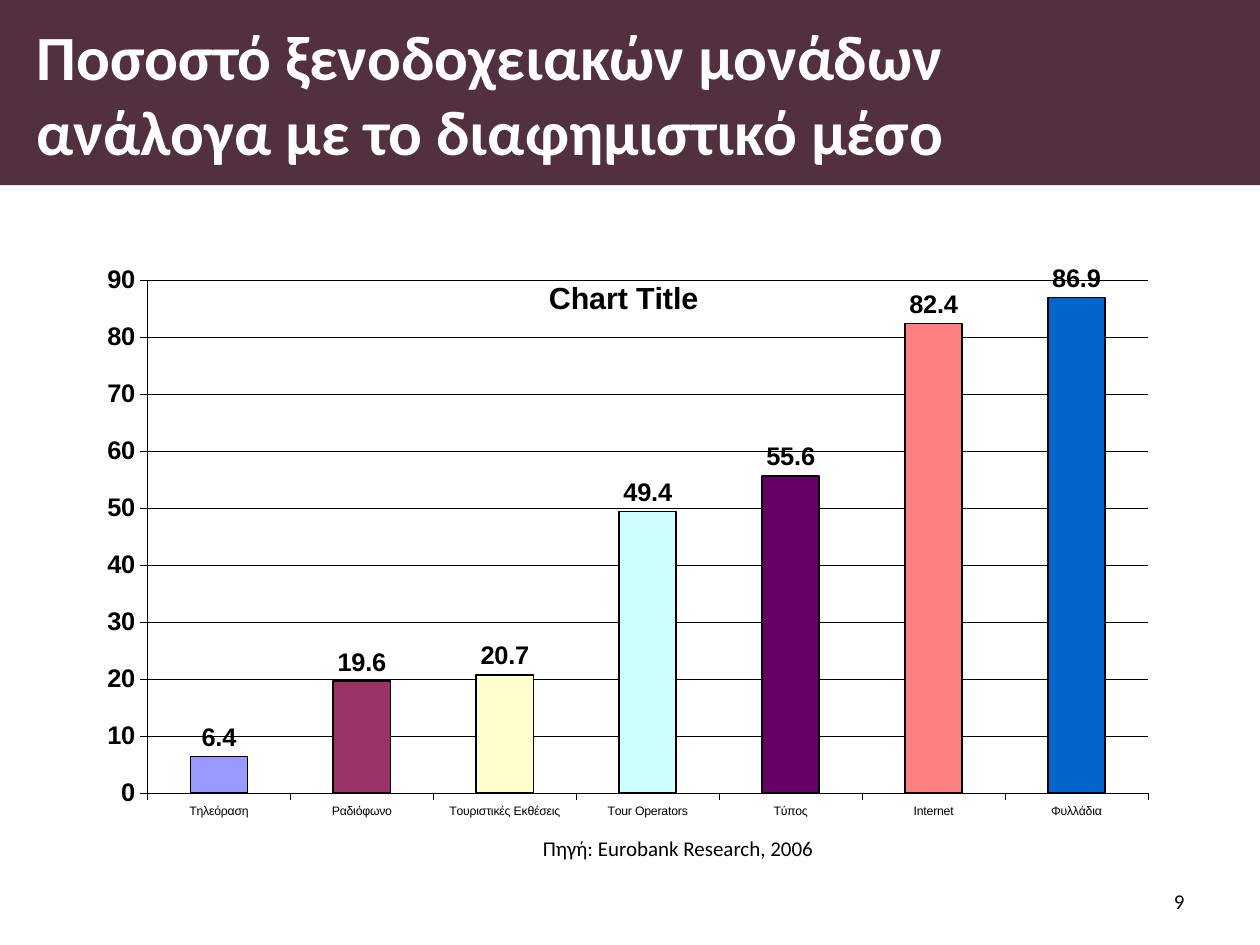
from lxml import etree
from pptx import Presentation
from pptx.chart.data import CategoryChartData
from pptx.dml.color import RGBColor
from pptx.enum.chart import XL_CHART_TYPE as ChartType
from pptx.enum.chart import XL_LABEL_POSITION as LabelPos
from pptx.enum.chart import XL_TICK_LABEL_POSITION as TickLabelPos
from pptx.enum.chart import XL_TICK_MARK as TickMark
from pptx.enum.text import MSO_ANCHOR as Anchor
from pptx.enum.text import MSO_AUTO_SIZE as AutoSize
from pptx.enum.text import PP_ALIGN as Align
from pptx.oxml import parse_xml
from pptx.oxml.ns import nsdecls, qn
from pptx.util import Inches, Pt

COLORS = {"band": "52303F", "white": "FFFFFF", "black": "000000"}

# category, percentage, column colour
MEDIA = [
    ("Τηλεόραση", 6.4, "9999FF"),
    ("Ραδιόφωνο", 19.6, "993366"),
    ("Τουριστικές Εκθέσεις", 20.7, "FFFFCC"),
    ("Tour Operators", 49.4, "CCFFFF"),
    ("Τύπος", 55.6, "660066"),
    ("Internet", 82.4, "FF8080"),
    ("Φυλλάδια", 86.9, "0066CC"),
]


def rgb(name):
    return RGBColor.from_string(COLORS.get(name, name))


def style_font(font, size, color="black", name="Calibri", bold=False):
    font.size, font.name, font.bold = Pt(size), name, bold
    font.color.rgb = rgb(color)


def style_line(line, width):
    line.color.rgb = rgb("black")
    line.width = Pt(width)


def place(sp, x, y, w, h):
    sp.left, sp.top, sp.width, sp.height = (Inches(v) for v in (x, y, w, h))


def add_title(s, x, y, w, h):
    sp = s.shapes.title
    place(sp, x, y, w, h)
    sp.fill.solid()
    sp.fill.fore_color.rgb = rgb("band")
    tf = sp.text_frame
    tf.text = "Ποσοστό ξενοδοχειακών μονάδων \vανάλογα με το διαφημιστικό μέσο"
    tf.auto_size = AutoSize.NONE
    tf.vertical_anchor = Anchor.MIDDLE
    tf.margin_left = Inches(0.29)
    p = tf.paragraphs[0]
    p.alignment = Align.LEFT
    style_font(p.font, 36, "white", bold=True)


def add_text(s, text, x, y, w, h, align=Align.LEFT, anchor=Anchor.TOP, wrap=True):
    tf = s.shapes.add_textbox(*(Inches(v) for v in (x, y, w, h))).text_frame
    tf.text = text
    tf.word_wrap = wrap
    tf.vertical_anchor = anchor
    p = tf.paragraphs[0]
    p.alignment = align
    style_font(p.font, 12)


def set_layout(parent, index, **values):
    """Give a chart title or plot area a manual layout, in fractions of the chart."""
    for old in parent.findall(qn("c:layout")):
        parent.remove(old)
    layout = parse_xml(f"<c:layout {nsdecls('c')}><c:manualLayout/></c:layout>")
    for tag, value in values.items():
        etree.SubElement(layout[0], qn(f"c:{tag}")).set("val", str(value))
    parent.insert(index, layout)


def add_chart_title(chart):
    title = chart.chart_title
    title.text_frame.text = "Chart Title"
    style_font(title.text_frame.paragraphs[0].font, 17.4, name="Arial", bold=True)
    title_xml = chart.element.chart.find(qn("c:title"))
    set_layout(title_xml, 1, xMode="edge", yMode="edge", x=0.43, y=0.045)
    overlay = title_xml.find(qn("c:overlay"))
    if overlay is None:
        overlay = etree.Element(qn("c:overlay"))
        title_xml.find(qn("c:layout")).addnext(overlay)
    overlay.set("val", "1")


def style_axis(axis, size, bold):
    axis.major_tick_mark = TickMark.OUTSIDE
    axis.minor_tick_mark = TickMark.NONE
    style_font(axis.tick_labels.font, size, name="Arial", bold=bold)
    style_line(axis.format.line, 0.22)


def add_media_chart(s, x, y, w, h):
    data = CategoryChartData()
    data.categories = [name for name, _, _ in MEDIA]
    data.add_series("Series 1", [value for _, value, _ in MEDIA])
    box = [Inches(v) for v in (x, y, w, h)]
    chart = s.shapes.add_chart(ChartType.COLUMN_CLUSTERED, *box, data).chart
    chart.has_legend = False
    style_font(chart.font, 14.5, name="Arial", bold=True)
    add_chart_title(chart)
    set_layout(chart.element.chart.plotArea, 0, layoutTarget="inner", xMode="edge",
               yMode="edge", x=0.067, y=0.056, w=0.917, h=0.808)

    style_axis(chart.category_axis, 7, False)
    chart.category_axis.tick_label_position = TickLabelPos.LOW
    axis = chart.value_axis
    style_axis(axis, 14.5, True)
    axis.minimum_scale, axis.maximum_scale, axis.major_unit = 0, 90, 10
    style_line(axis.major_gridlines.format.line, 0.22)

    plot = chart.plots[0]
    plot.gap_width = 150
    plot.vary_by_categories = False
    series = plot.series[0]
    for i, (_, _, color) in enumerate(MEDIA):
        fmt = series.points[i].format
        fmt.fill.solid()
        fmt.fill.fore_color.rgb = rgb(color)
        style_line(fmt.line, 0.88)
    labels = series.data_labels
    labels.show_value = True
    labels.position = LabelPos.OUTSIDE_END
    style_font(labels.font, 14.5, name="Arial", bold=True)


def main():
    prs = Presentation()
    prs.slide_width, prs.slide_height = Inches(10), Inches(7.5)
    s = prs.slides.add_slide(prs.slide_layouts[5])
    add_title(s, 0, 0, 10, 1.47)
    add_text(s, "9", 7.17, 6.95, 2.33, 0.4, Align.RIGHT, Anchor.MIDDLE)
    add_media_chart(s, 0.59, 1.94, 8.66, 5.04)
    add_text(s, "Πηγή: Eurobank Research, 2006", 4.21, 6.58, 2.38, 0.3, wrap=False)
    prs.save("out.pptx")


if __name__ == "__main__":
    main()
